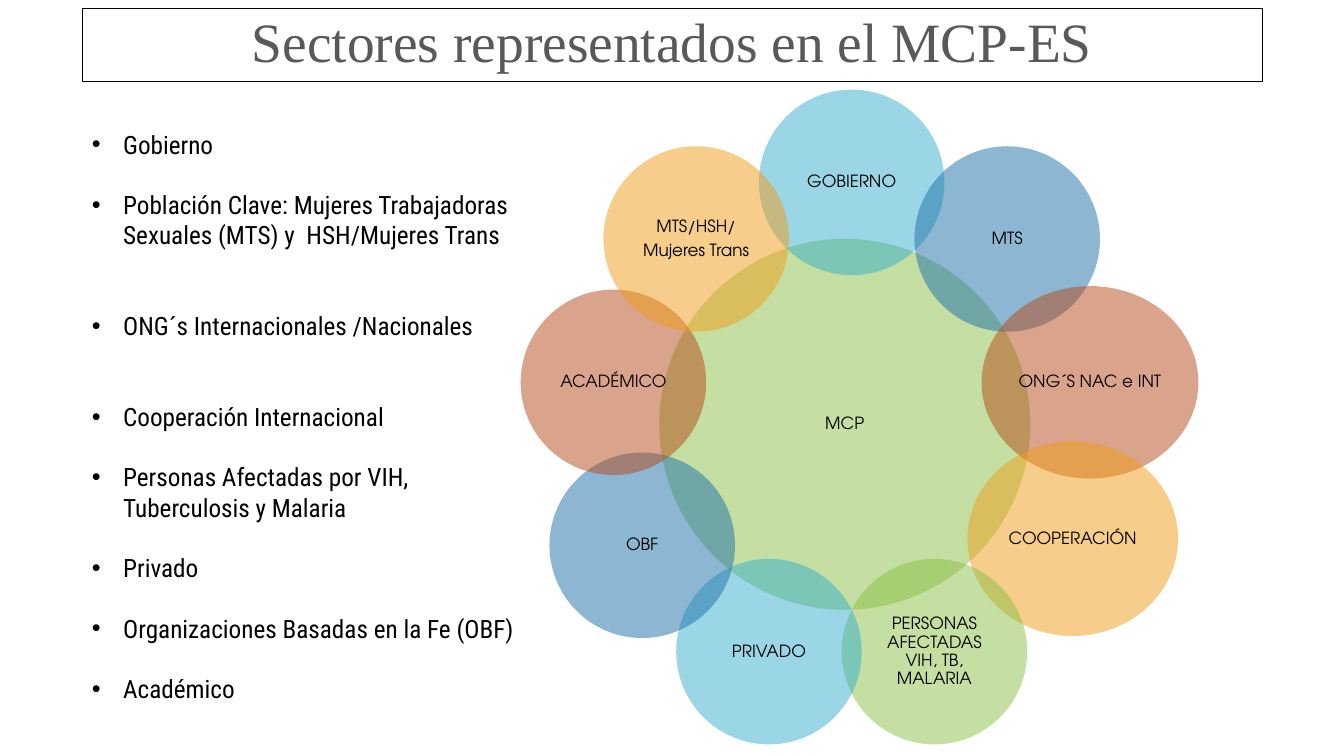
"""Build the slide of sectors represented in the MCP-ES."""
from math import cos, radians, sin

from lxml.etree import SubElement
from pptx import Presentation
from pptx.dml.color import RGBColor
from pptx.enum.shapes import MSO_SHAPE
from pptx.enum.text import MSO_ANCHOR, PP_ALIGN
from pptx.oxml.ns import qn
from pptx.util import Pt

THEME = {
    "black": "000000", "title": "595959",
    "green": "8BC145", "cyan": "36AFCE", "blue": "1D6FA9",
    "red": "B74919", "orange": "F19D19",
    "title_font": "Times New Roman", "title_size": 39.6,
    "list_font": "Roboto Condensed", "list_size": 18,
    "circle_font": "TeX Gyre Adventor", "circle_size": 12,
}

TITLE = "Sectores representados en el MCP-ES"

# fmt: (text, empty lines above)
SECTORS = [
    ("Gobierno", 0),
    ("Población Clave: Mujeres Trabajadoras Sexuales (MTS) y  HSH/Mujeres Trans", 1),
    ("ONG´s Internacionales /Nacionales", 2),
    ("Cooperación Internacional", 2),
    ("Personas Afectadas por VIH, Tuberculosis y Malaria", 1),
    ("Privado", 1),
    ("Organizaciones Basadas en la Fe (OBF)", 1),
    ("Académico", 1),
]

ROUND = (132.5, 132.5)
RING = [
    ("GOBIERNO", "cyan", ROUND, (0, 0)),
    ("MTS", "blue", ROUND, (0, 0)),
    ("ONG´S NAC e INT", "red", (154.8, 137.5), (0, 0)),
    ("COOPERACIÓN", "orange", (150.5, 139), (8.2, -4.7)),
    ("PERSONAS AFECTADAS VIH, TB, MALARIA", "green", ROUND, (0, 0)),
    ("PRIVADO", "cyan", ROUND, (0, 0)),
    ("OBF", "blue", ROUND, (0, 0)),
    ("ACADÉMICO", "red", ROUND, (0, 0)),
    ("MTS/HSH/\nMujeres Trans", "orange", ROUND, (0, 0)),
]
RING_CENTRE = (608.4, 303.1)
RING_RADIUS = 172.8
HUB = ("MCP", "green", (265, 265))
HUB_CENTRE = (603.4, 303.1)
LINE_PITCH = 21.6
BULLET_INDENT = 22.3


def style_runs(paragraph, role, color):
    for run in paragraph.runs:
        run.font.name = THEME[role + "_font"]
        run.font.size = Pt(THEME[role + "_size"])
        run.font.color.rgb = RGBColor.from_string(THEME[color])


def add_title(slide):
    shape = slide.shapes.add_shape(MSO_SHAPE.RECTANGLE, Pt(58.6), Pt(5.9), Pt(843), Pt(52))
    shape.shadow.inherit = False
    shape.fill.background()
    shape.line.color.rgb = RGBColor.from_string(THEME["black"])
    shape.line.width = Pt(0.25)
    frame = shape.text_frame
    frame.text = TITLE
    frame.vertical_anchor = MSO_ANCHOR.MIDDLE
    paragraph = frame.paragraphs[0]
    paragraph.alignment = PP_ALIGN.CENTER
    paragraph.line_spacing = 0.9
    style_runs(paragraph, "title", "title")


def add_circle(slide, label, color, size, centre):
    width, height = size
    left, top = centre[0] - width / 2, centre[1] - height / 2
    shape = slide.shapes.add_shape(MSO_SHAPE.OVAL, Pt(left), Pt(top), Pt(width), Pt(height))
    shape.shadow.inherit = False
    shape.line.fill.background()
    shape.fill.solid()
    shape.fill.fore_color.rgb = RGBColor.from_string(THEME[color])
    fill_color = shape.fill._xPr.find(qn("a:solidFill"))[0]
    SubElement(fill_color, qn("a:alpha")).set("val", "50000")
    frame = shape.text_frame
    frame.text = label
    frame.word_wrap = True
    frame.vertical_anchor = MSO_ANCHOR.MIDDLE
    frame.margin_left = frame.margin_right = Pt(1.4)
    frame.margin_top = frame.margin_bottom = Pt(1.4)
    for paragraph in frame.paragraphs:
        paragraph.alignment = PP_ALIGN.CENTER
        paragraph.line_spacing = 0.9
        paragraph.space_after = Pt(4.2)
        style_runs(paragraph, "circle", "black")


def add_ring(slide):
    add_circle(slide, *HUB, HUB_CENTRE)
    for index, (label, color, size, shift) in enumerate(RING):
        angle = radians(index * 360 / len(RING))
        centre = (RING_CENTRE[0] + RING_RADIUS * sin(angle) + shift[0],
                  RING_CENTRE[1] - RING_RADIUS * cos(angle) + shift[1])
        add_circle(slide, label, color, size, centre)


def add_sector_list(slide):
    box = slide.shapes.add_textbox(Pt(58.6), Pt(88.6), Pt(332.6), Pt(422))
    frame = box.text_frame
    frame.word_wrap = True
    frame.text = "\n".join(text for text, gap in SECTORS)
    for paragraph, (text, gap) in zip(frame.paragraphs, SECTORS):
        paragraph.space_before = Pt(gap * LINE_PITCH)
        paragraph.line_spacing = Pt(LINE_PITCH)
        style_runs(paragraph, "list", "black")
        properties = paragraph._p.get_or_add_pPr()
        properties.set("marL", str(Pt(BULLET_INDENT)))
        properties.set("indent", str(-Pt(BULLET_INDENT)))
        SubElement(properties, qn("a:buFont")).set("typeface", "Arial")
        SubElement(properties, qn("a:buChar")).set("char", "•")


def main():
    presentation = Presentation()
    presentation.slide_width, presentation.slide_height = Pt(960), Pt(540)
    slide = presentation.slides.add_slide(presentation.slide_layouts[6])
    add_title(slide)
    add_ring(slide)
    add_sector_list(slide)
    presentation.save("out.pptx")


if __name__ == "__main__":
    main()
